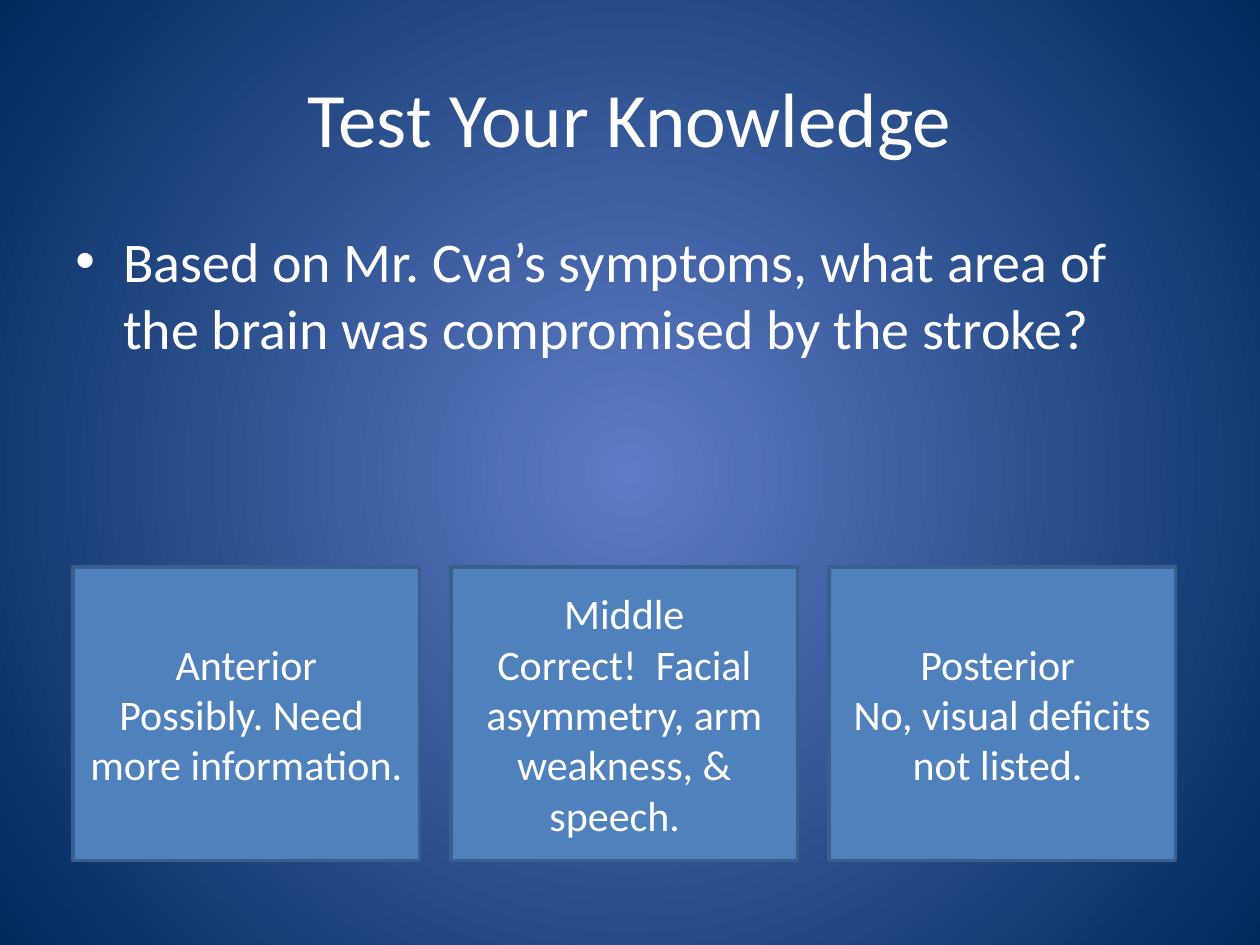
from lxml import etree
from pptx import Presentation
from pptx.dml.color import RGBColor
from pptx.enum.shapes import MSO_SHAPE
from pptx.enum.text import MSO_ANCHOR, PP_ALIGN
from pptx.oxml import parse_xml
from pptx.oxml.ns import nsdecls, qn
from pptx.util import Inches, Pt

# Content
TITLE = "Test Your Knowledge"
QUESTION = ("Based on Mr. Cva’s symptoms, what area of the brain "
            "was compromised by the stroke?")
ANSWERS = [
    ("Anterior", "Possibly. Need  more information."),
    ("Middle", "Correct!  Facial asymmetry, arm weakness, & speech.  "),
    ("Posterior ", "No, visual deficits not listed. "),
]

# Style
FONT = "Calibri"
WHITE = RGBColor(0xFF, 0xFF, 0xFF)
BOX_FILL = RGBColor(0x4F, 0x81, 0xBD)
BOX_LINE = RGBColor(0x3A, 0x5F, 0x8C)
GLOW = RGBColor(0x5E, 0x7C, 0xC5)
NAVY = RGBColor(0x00, 0x29, 0x5C)
CENTER, LEFT = PP_ALIGN.CENTER, PP_ALIGN.LEFT
MIDDLE, TOP = MSO_ANCHOR.MIDDLE, MSO_ANCHOR.TOP
RECTANGLE = MSO_SHAPE.RECTANGLE

# Answer row
BOX_LEFT, BOX_TOP, BOX_W, BOX_H, BOX_GAP = 0.58, 4.5, 2.75, 2.33, 0.25


def write(sp, lines, size, align, anchor):
    tf = sp.text_frame
    tf.word_wrap = True
    tf.vertical_anchor = anchor
    for i, line in enumerate(lines):
        p = tf.add_paragraph() if i else tf.paragraphs[0]
        p.alignment = align
        r = p.add_run()
        r.text = line
        r.font.name = FONT
        r.font.size = Pt(size)
        r.font.color.rgb = WHITE


def set_background(s):
    fill = s.background.fill
    fill.gradient()
    for stop, color in zip(fill.gradient_stops, (GLOW, NAVY)):
        stop.color.rgb = color
    # Turn the linear gradient into a radial one
    lin = next(s.element.iter(qn("a:lin")))
    lin.getparent().replace(lin, parse_xml(
        f'<a:path {nsdecls("a")} path="circle">'
        '<a:fillToRect l="50000" t="50000" r="50000" b="50000"/></a:path>'))


def add_bullet(p, indent):
    pPr = p._p.get_or_add_pPr()
    pPr.set("marL", str(indent))
    pPr.set("indent", str(-indent))
    etree.SubElement(pPr, qn("a:buFont")).set("typeface", "Arial")
    etree.SubElement(pPr, qn("a:buChar")).set("char", "•")


def main():
    prs = Presentation()
    prs.slide_width, prs.slide_height = Inches(10), Inches(7.5)
    s = prs.slides.add_slide(prs.slide_layouts[5])
    set_background(s)

    # Title
    title = s.shapes.title
    title.left, title.top = Inches(0.5), Inches(0.3)
    title.width, title.height = Inches(9), Inches(1.25)
    write(title, [TITLE], 44, CENTER, MIDDLE)

    # Answer boxes
    for i, answer in enumerate(ANSWERS):
        left = BOX_LEFT + i * (BOX_W + BOX_GAP)
        sp = s.shapes.add_shape(RECTANGLE, Inches(left), Inches(BOX_TOP),
                                Inches(BOX_W), Inches(BOX_H))
        sp.shadow.inherit = False
        sp.fill.solid()
        sp.fill.fore_color.rgb = BOX_FILL
        sp.line.color.rgb = BOX_LINE
        sp.line.width = Pt(2)
        write(sp, answer, 24, CENTER, MIDDLE)

    # Question
    question = s.shapes.add_textbox(Inches(0.5), Inches(1.75),
                                    Inches(9), Inches(3.08))
    write(question, [QUESTION], 32, LEFT, TOP)
    p = question.text_frame.paragraphs[0]
    p.space_before = Pt(6.4)
    add_bullet(p, Inches(0.38))

    prs.save("out.pptx")


if __name__ == "__main__":
    main()
